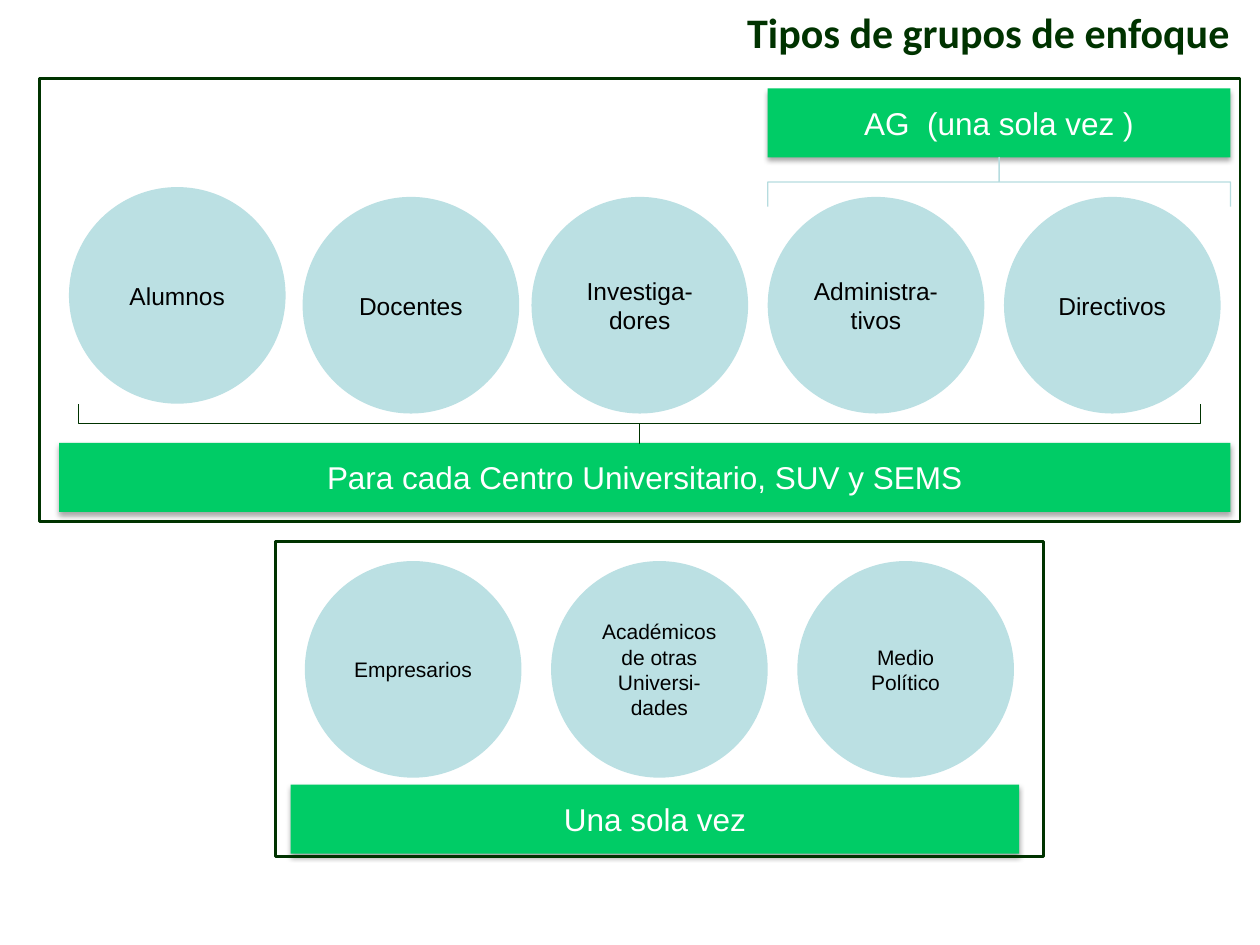
from lxml import etree
from pptx import Presentation
from pptx.dml.color import RGBColor
from pptx.enum.shapes import MSO_SHAPE
from pptx.enum.text import MSO_ANCHOR, MSO_AUTO_SIZE, PP_ALIGN
from pptx.oxml.ns import qn
from pptx.util import Pt

RECT = MSO_SHAPE.RECTANGLE
OVAL = MSO_SHAPE.OVAL
BRACE = MSO_SHAPE.LEFT_BRACE
MIDDLE = MSO_ANCHOR.MIDDLE
CENTER = PP_ALIGN.CENTER
LEFT = PP_ALIGN.LEFT
FIT_SHAPE = MSO_AUTO_SIZE.SHAPE_TO_FIT_TEXT

DARK = "003300"
GREEN = "00CC66"
PALE = "BBE0E3"
PALE_LINE = "B6DCDF"
BLACK = "000000"
WHITE = "FFFFFF"

DIAMETER = 123.8
BAR_HEIGHT = 39.4


def rgb(color):
    return RGBColor.from_string(color)


def write(s, text, size=14, color=BLACK, font="Arial", bold=False,
          align=CENTER, wrap=True):
    tf = s.text_frame
    tf.word_wrap = wrap
    p = tf.paragraphs[0]
    p.alignment = align
    r = p.add_run()
    r.text = text
    r.font.size = Pt(size)
    r.font.name = font
    r.font.bold = bold
    r.font.color.rgb = rgb(color)
    return tf


def add_shape(sp, kind, box, fill=None, line=None, width=0.75):
    s = sp.add_shape(kind, *[Pt(v) for v in box])
    s.shadow.inherit = False
    if fill:
        s.fill.solid()
        s.fill.fore_color.rgb = rgb(fill)
    else:
        s.fill.background()
    if line:
        s.line.color.rgb = rgb(line)
        s.line.width = Pt(width)
    else:
        s.line.fill.background()
    return s


def add_title(sp, text):
    s = sp.add_textbox(Pt(419.9), Pt(0), Pt(291), Pt(36.3))
    tf = write(s, text, size=24, color=DARK, font="Calibri", bold=True,
               align=LEFT, wrap=False)
    tf.auto_size = FIT_SHAPE


def add_circle(sp, left, top, text, size):
    s = add_shape(sp, OVAL, (left, top, DIAMETER, DIAMETER), fill=PALE)
    write(s, text, size=size).vertical_anchor = MIDDLE


def add_shadow(s):
    effects = s._element.spPr.find(qn("a:effectLst"))
    shadow = etree.SubElement(
        effects, qn("a:outerShdw"), blurRad=str(Pt(3.1)), dist=str(Pt(1.8)),
        dir="5400000", rotWithShape="0")
    color = etree.SubElement(shadow, qn("a:srgbClr"), val=BLACK)
    etree.SubElement(color, qn("a:alpha"), val="35000")


def add_bar(sp, left, top, width, text):
    s = add_shape(sp, RECT, (left, top, width, BAR_HEIGHT), fill=GREEN)
    add_shadow(s)
    write(s, text, size=18, color=WHITE).vertical_anchor = MIDDLE


def add_bracket(sp, left, top, width, height, rotation, color):
    box = (left + (width - height) / 2, top + (height - width) / 2,
           height, width)
    s = add_shape(sp, BRACE, box, line=color)
    s.adjustments[0] = 0
    s.adjustments[1] = 0.5
    s.rotation = rotation


def main():
    prs = Presentation()
    prs.slide_width = Pt(720)
    prs.slide_height = Pt(540)
    sp = prs.slides.add_slide(prs.slide_layouts[6]).shapes

    add_title(sp, "Tipos de grupos de enfoque")

    internal = [
        (39.4, 106.9, "Alumnos"),
        (172.9, 112.5, "Docentes"),
        (303.7, 112.5, "Investiga-dores"),
        (438.7, 112.5, "Administra-tivos"),
        (573.7, 112.5, "Directivos"),
    ]
    for left, top, text in internal:
        add_circle(sp, left, top, text, 14)

    external = ["Empresarios", "Académicos de otras Universi-dades",
                "Medio Político"]
    for i, text in enumerate(external):
        add_circle(sp, 174.2 + 140.7 * i, 320.6, text, 12)

    add_bar(sp, 166.1, 448.4, 416.2, "Una sola vez")
    add_bar(sp, 33.8, 253.1, 669.3,
            "Para cada Centro Universitario, SUV y SEMS")
    add_bar(sp, 438.7, 50.6, 264.4, "AG  (una sola vez )")

    for box in [(22.5, 44.7, 686.2, 253.4), (157.5, 309.4, 438.7, 180)]:
        add_shape(sp, RECT, box, line=DARK, width=1.5)

    add_bracket(sp, 438.7, 90, 264.4, 28.1, 90, PALE_LINE)
    add_bracket(sp, 44.8, 230.9, 641.3, 22.4, 270, DARK)

    prs.save("out.pptx")


if __name__ == "__main__":
    main()
